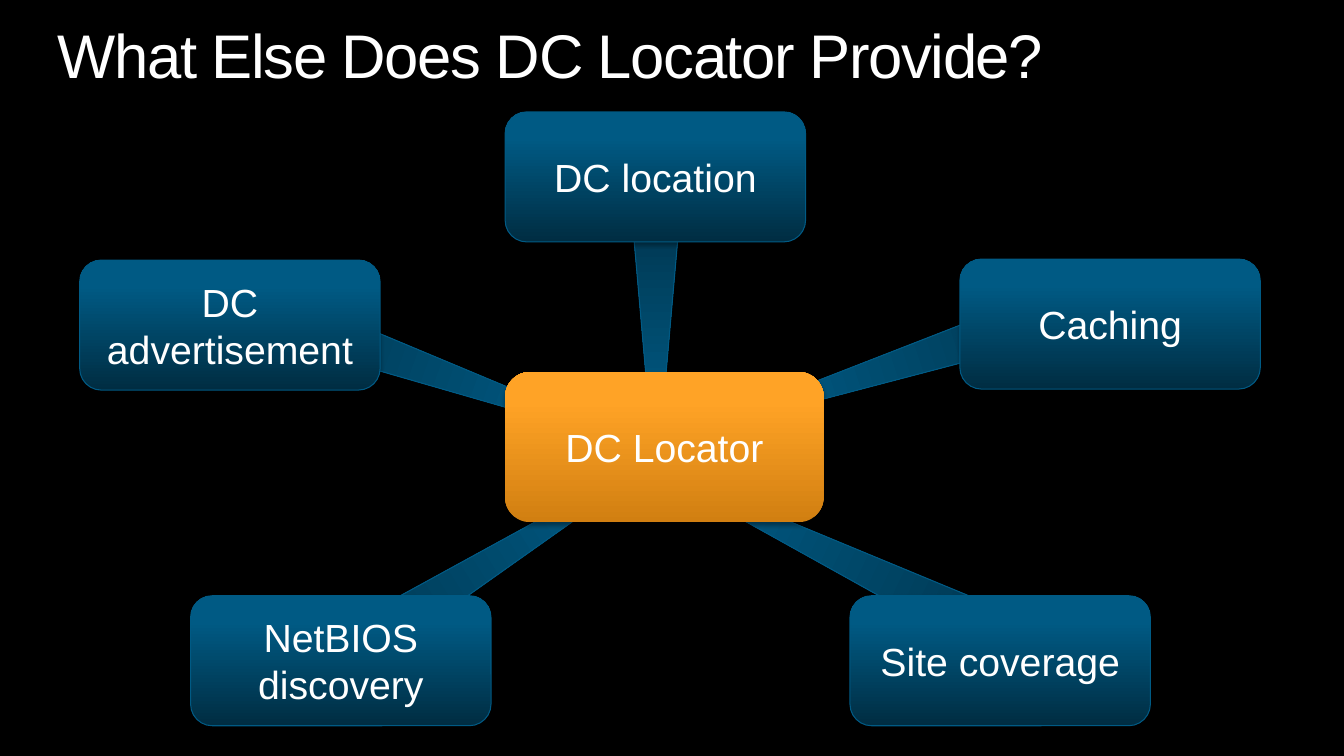
from dataclasses import dataclass

from lxml.etree import SubElement
from pptx import Presentation
from pptx.dml.color import RGBColor
from pptx.enum.shapes import MSO_SHAPE as Preset
from pptx.enum.text import MSO_ANCHOR as Anchor, MSO_AUTO_SIZE as AutoSize, PP_ALIGN as Align
from pptx.oxml.ns import qn
from pptx.shapes.autoshape import Shape
from pptx.shapes.shapetree import GroupShapes
from pptx.text.text import TextFrame
from pptx.util import Inches, Length, Pt

BLACK = RGBColor(0x00, 0x00, 0x00)
WHITE = RGBColor(0xFF, 0xFF, 0xFF)
NAVY = RGBColor(0x00, 0x2D, 0x42)
BLUE = RGBColor(0x00, 0x5A, 0x84)
AMBER = RGBColor(0xD1, 0x7F, 0x11)
ORANGE = RGBColor(0xFF, 0xA3, 0x26)

# Grid: square cells, ten to the inch
CELL = Inches(0.1)
TOPIC_COLS, TOPIC_ROWS = 29.8, 12.9
SPOKE_COLS = 5.7


def cells(count: float) -> Length:
    return Length(round(count * CELL))


@dataclass
class Spoke:
    """A triangle given by its centre, length and rotation."""
    col: float
    row: float
    angle: float
    length: float = 49.5


@dataclass
class Node:
    """A rounded box given by its top left cell."""
    text: str
    col: float
    row: float
    cols: float = TOPIC_COLS
    rows: float = TOPIC_ROWS
    dark: RGBColor = NAVY
    light: RGBColor = BLUE
    outlined: bool = True


SPOKES = [
    Spoke(65.05, 32.25, 180, length=32.5),
    Spoke(48.25, 56.05, 58),
    Spoke(83.55, 55.45, 295.8),
    Spoke(89.15, 36.15, 252),
    Spoke(42.95, 36.85, 109.4),
]
NODES = [
    Node("DC advertisement", 7.9, 25.8),
    Node("Caching", 95.2, 25.7),
    Node("NetBIOS discovery", 18.9, 59.1),
    Node("Site coverage", 84.3, 59.1),
    Node("DC Locator", 50.1, 36.9, 31.6, 14.9, AMBER, ORANGE, outlined=False),
    Node("DC location", 50.1, 11.1),
]


def set_all(target: object, values: dict) -> None:
    for name, value in values.items():
        setattr(target, name, value)


def add_shadow(shape: Shape) -> None:
    shape.shadow.inherit = False
    effects = shape._element.spPr.find(qn("a:effectLst"))
    shadow = SubElement(effects, qn("a:outerShdw"), blurRad=str(int(Pt(3.1))),
                        dist=str(int(Pt(1.8))), dir="5400000", rotWithShape="0")
    color = SubElement(shadow, qn("a:srgbClr"), val=str(BLACK))
    SubElement(color, qn("a:alpha"), val="35000")


def paint(shape: Shape, dark: RGBColor, light: RGBColor, outlined: bool) -> None:
    shape.fill.gradient()
    shape.fill.gradient_angle = 90
    for stop, color, position in zip(shape.fill.gradient_stops, (dark, light), (0, 0.8)):
        stop.color.rgb = color
        stop.position = position
    if outlined:
        shape.line.color.rgb = BLUE
        shape.line.width = Pt(0.75)
    else:
        shape.line.fill.background()
    add_shadow(shape)


def write(frame: TextFrame, text: str, size: float, align: Align) -> None:
    para = frame.paragraphs[0]
    para.alignment = align
    span = para.add_run()
    span.text = text
    set_all(span.font, {"name": "Arial", "size": Pt(size)})
    span.font.color.rgb = WHITE


def draw_spoke(shapes: GroupShapes, spoke: Spoke) -> None:
    shape = shapes.add_shape(
        Preset.ISOSCELES_TRIANGLE,
        cells(spoke.col - SPOKE_COLS / 2), cells(spoke.row - spoke.length / 2),
        cells(SPOKE_COLS), cells(spoke.length))
    shape.rotation = spoke.angle
    paint(shape, NAVY, BLUE, outlined=True)


def draw_node(shapes: GroupShapes, node: Node) -> None:
    box = shapes.add_shape(Preset.ROUNDED_RECTANGLE, cells(node.col), cells(node.row),
                           cells(node.cols), cells(node.rows))
    paint(box, node.dark, node.light, node.outlined)
    set_all(box.text_frame, {"word_wrap": True, "vertical_anchor": Anchor.MIDDLE})
    write(box.text_frame, node.text, 28, Align.CENTER)


def main() -> None:
    deck = Presentation()
    set_all(deck, {"slide_width": Inches(13.33), "slide_height": Inches(7.5)})
    page = deck.slides.add_slide(deck.slide_layouts[6])
    page.background.fill.solid()
    page.background.fill.fore_color.rgb = BLACK

    # Title
    title = page.shapes.add_textbox(cells(5.7), cells(2.5), cells(121.9), cells(6.7))
    frame = title.text_frame
    set_all(frame, {"word_wrap": True, "auto_size": AutoSize.SHAPE_TO_FIT_TEXT,
                    "margin_left": 0, "margin_right": 0,
                    "margin_top": 0, "margin_bottom": 0})
    write(frame, "What Else Does DC Locator Provide?", 44, Align.LEFT)
    para = frame.paragraphs[0]
    para.line_spacing = 0.9
    para.runs[0].font._element.set("spc", "-100")

    # Hub diagram: spokes behind, boxes in front
    diagram = page.shapes.add_group_shape().shapes
    for spoke in SPOKES:
        draw_spoke(diagram, spoke)
    for node in NODES:
        draw_node(diagram, node)

    deck.save("out.pptx")


if __name__ == "__main__":
    main()
